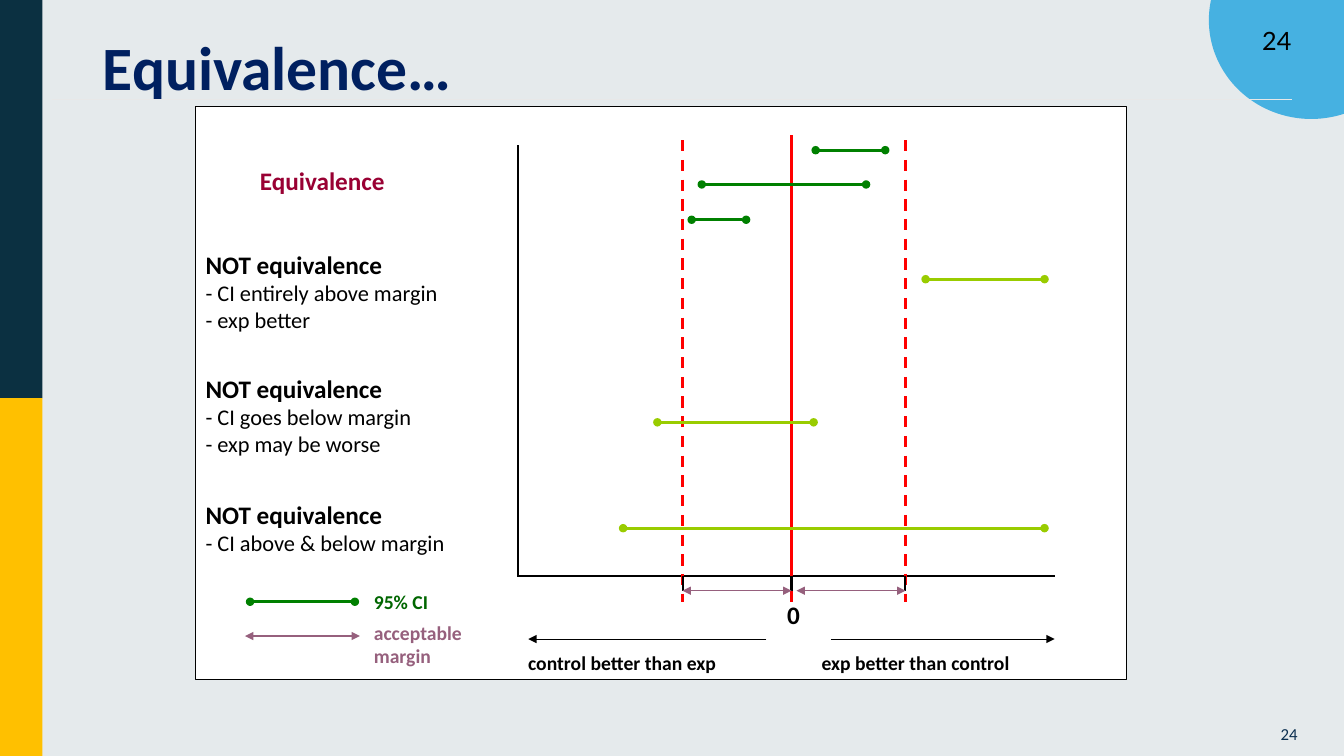
from pptx import Presentation
from pptx.dml.color import RGBColor
from pptx.enum.dml import MSO_LINE
from pptx.enum.shapes import MSO_CONNECTOR, MSO_SHAPE
from pptx.enum.text import MSO_ANCHOR, PP_ALIGN
from pptx.oxml.ns import qn
from pptx.util import Pt
from lxml import etree

PX = 9144
RECT, OVAL = MSO_SHAPE.RECTANGLE, MSO_SHAPE.OVAL
STRAIGHT, DASH = MSO_CONNECTOR.STRAIGHT, MSO_LINE.DASH
TOP, MIDDLE = MSO_ANCHOR.TOP, MSO_ANCHOR.MIDDLE
LEFT, CENTER, RIGHT = PP_ALIGN.LEFT, PP_ALIGN.CENTER, PP_ALIGN.RIGHT

COLORS = {
    "back": "E5EAEC", "disc": "46B1E1", "teal": "0B3041", "gold": "FFC000",
    "rule": "E8E8E8", "white": "FFFFFF", "black": "000000", "red": "FF0000",
    "green": "008000", "lime": "99CC00", "mauve": "96607D", "wine": "990033",
    "moss": "006600", "navy": "002060", "ink": "0A2E4F",
}


def color(name):
    return RGBColor.from_string(COLORS[name])


def write(frame, text, size=18, tint="black", bold=False, font="Calibri",
          align=LEFT, anchor=TOP, space=None, rest=None):
    frame.word_wrap = True
    frame.vertical_anchor = anchor
    for row, line in enumerate(text.split("\n")):
        para = frame.paragraphs[0] if row == 0 else frame.add_paragraph()
        para.alignment = align
        if space:
            para.line_spacing = space
        run = para.add_run()
        run.text = line
        lower = rest and row > 0
        run.font.name = font
        run.font.size = Pt(rest if lower else size)
        run.font.bold = False if lower else bold
        run.font.color.rgb = color(tint)


class Board:
    def __init__(self, deck):
        self.slide = deck.slides.add_slide(deck.slide_layouts[5])
        self.shapes = self.slide.shapes
        fill = self.slide.background.fill
        fill.solid()
        fill.fore_color.rgb = color("back")

    def title(self, box, text, **style):
        holder = self.shapes.title
        holder.left, holder.top, holder.width, holder.height = [n * PX for n in box]
        write(holder.text_frame, text, **style)

    def shape(self, kind, box, fill, edge=None, width=1):
        item = self.shapes.add_shape(kind, *[n * PX for n in box])
        item.shadow.inherit = False
        item.fill.solid()
        item.fill.fore_color.rgb = color(fill)
        if edge:
            item.line.color.rgb = color(edge)
            item.line.width = Pt(width)
        else:
            item.line.fill.background()

    def text(self, box, text, inset=None, **style):
        frame = self.shapes.add_textbox(*[n * PX for n in box]).text_frame
        if inset is not None:
            frame.margin_top = frame.margin_right = frame.margin_bottom = inset * PX
        write(frame, text, **style)

    def line(self, ends, tint, width, dash=None, head=None, tail=None):
        item = self.shapes.add_connector(STRAIGHT, *[n * PX for n in ends])
        item.line.color.rgb = color(tint)
        item.line.width = Pt(width)
        if dash:
            item.line.dash_style = dash
        pen = item.line._get_or_add_ln()
        for tag, cap in (("a:headEnd", head), ("a:tailEnd", tail)):
            if cap:
                etree.SubElement(pen, qn(tag)).set("type", cap)
        etree.SubElement(item._element.spPr, qn("a:effectLst"))

    def range(self, left, right, y, tint):
        self.line((left, y, right, y), tint, 2, head="oval", tail="oval")

    def margin(self, left, right, y, width=0.75):
        self.line((left, y, right, y), "mauve", width,
                  head="triangle", tail="triangle")


def main():
    deck = Presentation()
    deck.slide_width, deck.slide_height = 1333 * PX, 750 * PX
    board = Board(deck)

    board.shape(OVAL, (1200, -77, 201, 194), "disc", "disc", 1.5)
    board.text((1242, 20, 50, 40), "24", font="Lato")
    board.shape(RECT, (0, 0, 42, 395), "teal")
    board.shape(RECT, (0, 395, 42, 355), "gold")
    board.line((52, 99, 1281, 99), "rule", 1)
    board.title((92, 18, 1150, 105), "Equivalence…", size=44, tint="navy",
                bold=True, anchor=MIDDLE, space=0.9)

    board.shape(RECT, (194, 106, 923, 568), "white", "black", 0.75)
    board.line((514, 144, 514, 572), "black", 1.5)
    board.line((514, 571, 1046, 571), "black", 1.5)

    low, zero, high = 677, 785, 898
    board.line((zero, 134, zero, 597), "red", 2)
    for x in (low, high):
        board.line((x, 139, x, 597), "red", 2, dash=DASH)
    for x in (low, zero, high):
        board.line((x, 571, x, 586), "black", 1.5)
    board.margin(low, zero, 586)
    board.margin(zero + 5, high, 586)

    for left, right, y, tint in (
        (809, 878, 149, "green"),
        (696, 859, 183, "green"),
        (686, 740, 218, "green"),
        (918, 1036, 277, "lime"),
        (652, 807, 419, "lime"),
        (618, 1036, 524, "lime"),
        (248, 352, 597, "green"),
    ):
        board.range(left, right, y, tint)

    board.text((248, 159, 251, 40), "Equivalence", tint="wine", bold=True)
    for y, tall, notes in (
        (242, 94, "- CI entirely above margin\n- exp better"),
        (365, 94, "- CI goes below margin\n- exp may be worse"),
        (490, 67, "- CI above & below margin"),
    ):
        board.text((194, y, 320, tall), "NOT equivalence\n" + notes,
                   bold=True, rest=16)

    board.text((361, 580, 153, 33), "95% CI", size=14, tint="moss", bold=True)
    board.margin(243, 357, 631, 1)
    board.text((361, 611, 153, 57), "acceptable\nmargin", size=14,
               tint="mauve", bold=True)

    board.text((770, 590, 34, 40), "0", bold=True, align=CENTER)
    for start, end, x, label in (
        (760, 524, 514, "control better than exp"),
        (824, 1046, 805, "exp better than control"),
    ):
        board.line((start, 634, end, 634), "black", 0.75, tail="triangle")
        board.text((x, 641, 280, 33), label, size=14, bold=True)

    board.text((1217, 718, 70, 32), "24", inset=0, size=12, tint="ink",
               align=RIGHT)
    deck.save("out.pptx")


if __name__ == "__main__":
    main()
